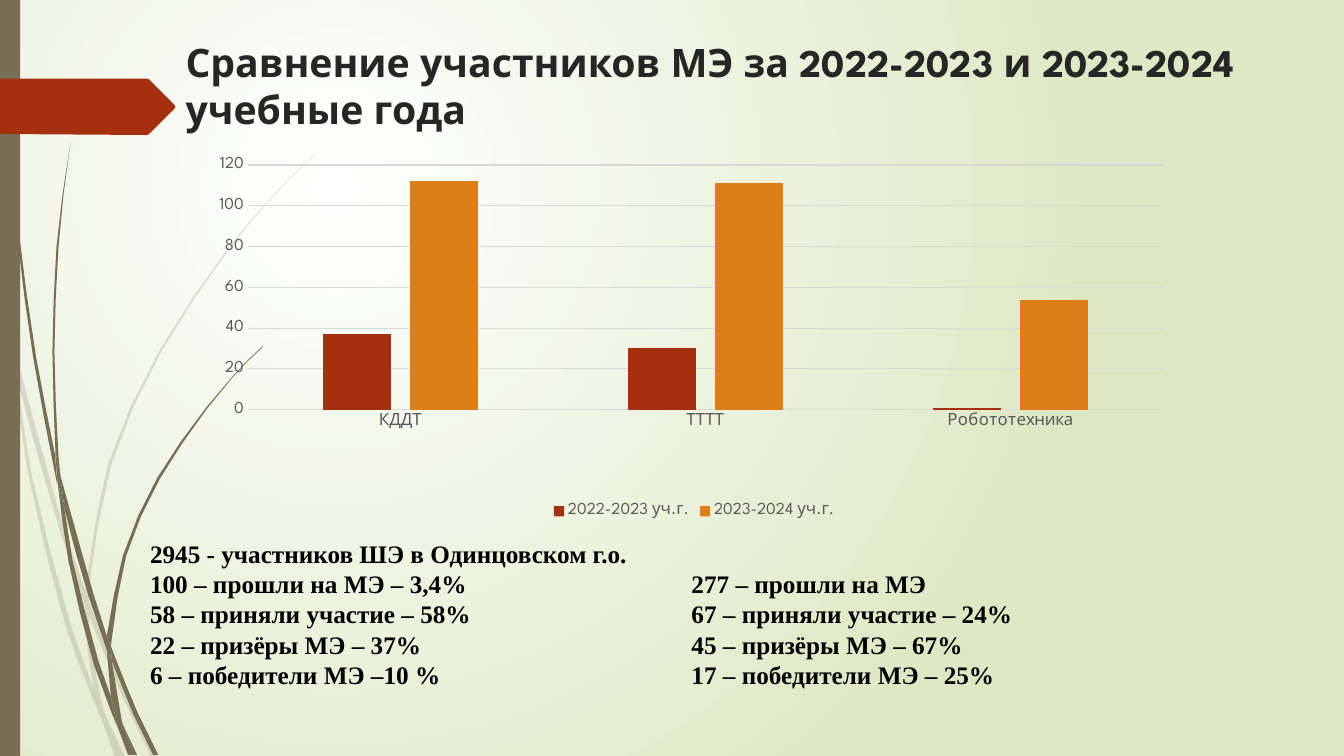
import math

import pptx
import pptx.chart.data
import pptx.dml.color
import pptx.enum.chart
import pptx.enum.shapes
import pptx.enum.text
import pptx.oxml
import pptx.oxml.ns
import pptx.util
from pptx.util import Inches

RGBColor = pptx.dml.color.RGBColor
WHITE = RGBColor(0xFF, 0xFF, 0xFF)
BLACK = RGBColor(0, 0, 0)
PALE_GREEN = RGBColor(0xDF, 0xE8, 0xC4)
OLIVE = RGBColor(0x76, 0x6F, 0x54)
RUST = RGBColor(0xA5, 0x30, 0x10)
ORANGE = RGBColor(0xDE, 0x7E, 0x18)
DARK = RGBColor(0x26, 0x26, 0x26)
GREY = RGBColor(0x59, 0x59, 0x59)
GRID = RGBColor(0xD9, 0xD9, 0xD9)
HEAD_FONT, BODY_FONT = "League Spartan", "Times New Roman"
ALIGN = pptx.enum.text.PP_ALIGN
NSDECLS = pptx.oxml.ns.nsdecls

# Each blade of grass is two edges, given by points in inches
FAINT_BLADES = [
    ([(.11, 3.5), (.09, 3.22), (0, 2.82)], [(0, 2.99), (.1, 3.44)]),
    ([(.14, 3.45), (.17, 3.76), (.58, 5.22), (.84, 5.99)], [(.85, 5.86), (.62, 5.2), (.14, 3.45)]),
    ([(.88, 5.96), (.88, 6.1), (1.23, 6.94), (1.5, 7.51)], [(1.55, 7.51), (1.27, 6.92), (.92, 6.07)]),
    ([(1.19, 7.51), (1.24, 7.51)], [(1.05, 7.11)]),
    ([(1.01, 7.14), (.93, 6.83), (.7, 6.19), (.31, 4.69), (.17, 3.76), (.11, 3.5)],
     [(.11, 3.5), (.28, 4.7), (.65, 6.21), (.92, 6.93), (1.01, 7.14)]),
    ([(.84, 5.99), (.87, 6.46), (.93, 6.83), (.96, 6.92), (1.05, 7.11)],
     [(1.03, 7.06), (.91, 6.46), (.88, 6.1)]),
    ([(.88, 5.96), (.88, 5.84), (1.1, 4.62), (1.6, 3.49), (2.29, 2.45), (2.68, 1.98), (2.9, 1.75), (3.12, 1.54)],
     [(3.12, 1.53), (2.89, 1.75), (2.68, 1.97), (2.28, 2.44), (1.58, 3.48), (1.07, 4.61), (.85, 5.84)]),
    ([(1.01, 7.14), (1.14, 7.51)], [(1.19, 7.51)]),
    ([(.88, 6.1), (.88, 5.96), (.85, 5.86)], [(.84, 5.99), (.88, 6.08)]),
    ([(1.19, 7.51), (1.05, 7.11), (.96, 6.92), (.93, 6.83)], [(.99, 7.07), (1.01, 7.14)]),
]
DARK_BLADES = [
    ([(.03, 0), (.04, .48), (.07, 1.1), (.17, 2.33), (.33, 3.55), (.56, 4.77), (.57, 4.81)],
     [(.55, 4.57), (.55, 4.53), (.36, 3.55), (.19, 2.32), (.08, 1.09), (.05, .48), (.04, 0)]),
    ([(.6, 4.72), (.64, 5.05), (.88, 5.92), (1.06, 6.45)], [(1.06, 6.31), (.93, 5.9), (.6, 4.72)]),
    ([(1.1, 6.41), (1.11, 6.56), (1.32, 7.08), (1.52, 7.49)], [(1.57, 7.49), (1.36, 7.06), (1.13, 6.49)]),
    ([(1.17, 7.22), (1.1, 6.91), (.98, 6.57), (.72, 5.56), (.64, 5.05), (.57, 4.77)],
     [(.57, 4.77), (.68, 5.57), (.93, 6.59), (1.11, 7.08)]),
    ([(.6, 4.72), (.58, 4.53), (.54, 3.49), (.58, 2.45), (.63, 1.93), (.7, 1.41)],
     [(.7, 1.41), (.62, 1.93), (.56, 2.45), (.52, 3.49), (.55, 4.49)]),
    ([(1.33, 7.49), (1.36, 7.49)], [(1.22, 7.19)]),
    ([(.57, 4.77), (.64, 5.05)], [(.6, 4.72), (.55, 4.49), (.55, 4.53)]),
    ([(1.1, 6.41), (1.11, 6.33), (1.25, 5.52), (1.58, 4.76), (2.05, 4.06), (2.31, 3.74), (2.45, 3.59), (2.61, 3.44)],
     [(2.6, 3.44), (2.45, 3.58), (2.31, 3.73), (2.04, 4.05), (1.56, 4.74), (1.22, 5.51), (1.06, 6.31)]),
    ([(1.17, 7.22), (1.27, 7.49)], [(1.31, 7.49)]),
    ([(1.06, 6.45), (1.1, 6.91), (1.16, 7.06), (1.22, 7.19)], [(1.21, 7.16), (1.11, 6.56)]),
    ([(1.06, 6.45), (1.09, 6.51), (1.11, 6.56)], [(1.1, 6.41), (1.06, 6.31)]),
    ([(1.33, 7.49), (1.22, 7.19), (1.1, 6.91)], [(1.17, 7.22), (1.3, 7.49)]),
]
FLAG = [(0, 0), (1.46, 0), (1.48, .01), (1.73, .26), (1.74, .28), (1.73, .3), (1.48, .55), (1.46, .56), (0, .55)]

RESULTS_2023 = ["2945 - участников ШЭ в Одинцовском г.о.", "100 – прошли на МЭ – 3,4%",
                "58 – приняли участие – 58%", "22 – призёры МЭ – 37%", "6 – победители МЭ –10 %"]
RESULTS_2024 = ["277 – прошли на МЭ", "67 – приняли участие – 24%",
                "45 – призёры МЭ – 67%", "17 – победители МЭ – 25%"]


def smooth(edge, longest=.6):
    """The edge, with a point added on the curve amid each long stretch."""
    slopes = []
    for i in range(len(edge)):
        around = edge[max(i - 1, 0):i + 2]
        length = sum(math.dist(a, b) for a, b in zip(around, around[1:])) or 1
        slopes.append([(around[-1][k] - around[0][k]) / length for k in (0, 1)])
    points = [edge[0]]
    for i, (a, b) in enumerate(zip(edge, edge[1:])):
        d = math.dist(a, b)
        if d > longest:
            points.append([(a[k] + b[k]) / 2 + d * (slopes[i][k] - slopes[i + 1][k]) / 8 for k in (0, 1)])
        points.append(b)
    return points


def paint(sp, color):
    sp.shadow.inherit = False
    sp.fill.solid()
    sp.fill.fore_color.rgb = color
    sp.line.fill.background()
    return sp


def add_outline(s, points, color, x=0, y=0):
    emu = [(Inches(x + px), Inches(y + py)) for px, py in points]
    builder = s.shapes.build_freeform(*emu[0], scale=1.0)
    builder.add_line_segments(emu[1:], close=True)
    return paint(builder.convert_to_shape(), color)


def set_font(font, size, color, name, bold=False):
    font.size, font.name, font.bold = pptx.util.Pt(size), name, bold
    font.color.rgb = color


def write(tf, lines, size, color, name, bold=True, align=ALIGN.LEFT):
    tf.word_wrap = True
    tf.vertical_anchor = pptx.enum.text.MSO_ANCHOR.TOP
    for i, line in enumerate(lines):
        p = tf.paragraphs[0] if i == 0 else tf.add_paragraph()
        p.alignment = align
        r = p.add_run()
        r.text = line
        set_font(r.font, size, color, name, bold)


def add_background(s):
    fill = s.background.fill
    fill.gradient()
    for stop, position, color in zip(fill.gradient_stops, (0, 1), (WHITE, PALE_GREEN)):
        stop.position = position
        stop.color.rgb = color
    grad = s.element.xpath(".//p:bg//a:gradFill")[0]
    for lin in grad.xpath("a:lin"):
        grad.remove(lin)
    grad.append(pptx.oxml.parse_xml(
        f'<a:path {NSDECLS("a")} path="circle">'
        '<a:fillToRect l="50000" t="50000" r="100000" b="100000"/></a:path>'))


def add_grass(s, blades, opacity=100):
    shapes = [add_outline(s, smooth(left) + smooth(right), OLIVE) for left, right in blades]
    for sp in shapes:
        if opacity < 100:
            color = sp.element.xpath("p:spPr/a:solidFill/a:srgbClr")[0]
            color.append(pptx.oxml.parse_xml(f'<a:alpha {NSDECLS("a")} val="{opacity * 1000}"/>'))
    return s.shapes.add_group_shape(shapes)


def add_backdrop(s):
    """Grass, side bar and flag, kept on the layout behind the slide's content."""
    parts = [add_grass(s, FAINT_BLADES, opacity=20), add_grass(s, DARK_BLADES),
             paint(s.shapes.add_shape(pptx.enum.shapes.MSO_SHAPE.RECTANGLE, 0, 0, Inches(.2), Inches(7.5)), OLIVE),
             add_outline(s, FLAG, RUST, y=.78)]
    tree = s.slide_layout.element.xpath("p:cSld/p:spTree")[0]
    for i, part in enumerate(parts, start=2):
        tree.insert(i, part.element)


def add_title(s, x, y, w, h, text):
    title = s.shapes.title
    title.left, title.top, title.width, title.height = map(Inches, (x, y, w, h))
    title.text_frame.auto_size = pptx.enum.text.MSO_AUTO_SIZE.NONE
    write(title.text_frame, [text], 28, DARK, HEAD_FONT)


def add_participants_chart(s, x, y, w, h):
    data = pptx.chart.data.CategoryChartData()
    data.categories = ["КДДТ", "ТТТТ", "Робототехника"]
    data.add_series("2022-2023 уч.г.", (37, 30, 1))
    data.add_series("2023-2024 уч.г.", (112, 111, 54))
    chart = s.shapes.add_chart(pptx.enum.chart.XL_CHART_TYPE.COLUMN_CLUSTERED,
                               *map(Inches, (x, y, w, h)), data).chart
    chart.has_title = False
    set_font(chart.font, 10, BLACK, HEAD_FONT)
    # Columns
    plot = chart.plots[0]
    plot.gap_width, plot.overlap, plot.vary_by_categories = 219, -27, False
    for series, color in zip(plot.series, (RUST, ORANGE)):
        series.format.fill.solid()
        series.format.fill.fore_color.rgb = color
    # Axes
    cat, val = chart.category_axis, chart.value_axis
    for axis in (cat, val):
        axis.major_tick_mark = axis.minor_tick_mark = pptx.enum.chart.XL_TICK_MARK.NONE
        set_font(axis.tick_labels.font, 12, GREY, HEAD_FONT)
    val.format.line.fill.background()
    for line in (cat.format.line, val.major_gridlines.format.line):
        line.color.rgb = GRID
        line.width = pptx.util.Pt(.75)
    # Legend
    chart.has_legend = True
    chart.legend.position = pptx.enum.chart.XL_LEGEND_POSITION.BOTTOM
    chart.legend.include_in_layout = False
    set_font(chart.legend.font, 12, GREY, HEAD_FONT)
    # Plot area inside the chart
    area = chart.element.xpath(".//c:plotArea")[0]
    for layout in area.xpath("c:layout"):
        area.remove(layout)
    sizes = "".join(f'<c:{k} val="{v}"/>' for k, v in zip("xywh", (.046, .024, .931, .667)))
    area.insert(0, pptx.oxml.parse_xml(
        f'<c:layout {NSDECLS("c")}><c:manualLayout><c:layoutTarget val="inner"/>'
        f'<c:xMode val="edge"/><c:yMode val="edge"/>{sizes}</c:manualLayout></c:layout>'))


def add_results(s, x, y, w, h, lines):
    tf = s.shapes.add_textbox(*map(Inches, (x, y, w, h))).text_frame
    write(tf, lines, 18, BLACK, BODY_FONT, align=ALIGN.JUSTIFY)
    tf.auto_size = pptx.enum.text.MSO_AUTO_SIZE.SHAPE_TO_FIT_TEXT


def main():
    prs = pptx.Presentation()
    prs.slide_width, prs.slide_height = Inches(13.33), Inches(7.5)
    s = prs.slides.add_slide(prs.slide_layouts[5])
    add_background(s)
    add_backdrop(s)
    add_title(s, 1.74, .33, 10.84, 1.4, "Сравнение участников МЭ за 2022-2023 и 2023-2024 учебные года")
    add_participants_chart(s, 2.01, 1.55, 9.75, 3.64)
    add_results(s, 1.39, 5.29, 5.1, 1.62, RESULTS_2023)
    add_results(s, 6.76, 5.59, 3.66, 1.31, RESULTS_2024)
    prs.save("out.pptx")


if __name__ == "__main__":
    main()
